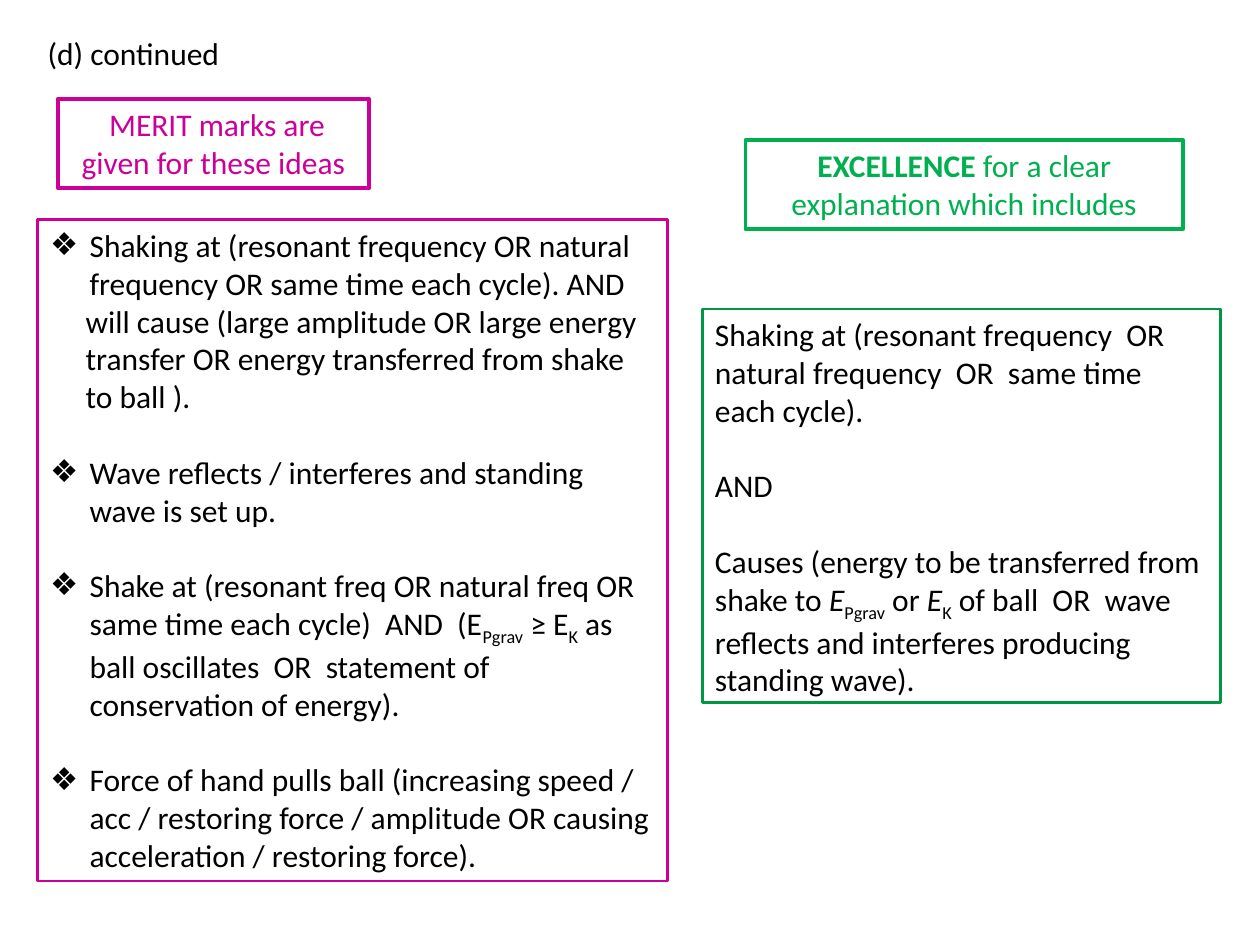
from lxml.etree import SubElement
from pptx import Presentation
from pptx.dml.color import RGBColor
from pptx.enum.text import MSO_ANCHOR, MSO_AUTO_SIZE, PP_ALIGN
from pptx.oxml.ns import qn
from pptx.util import Pt

TEXT_SIZE = 18
BLANK_LINE = 21.6
BLACK, MAGENTA, GREEN, DARK_GREEN = "000000", "CC0099", "00B050", "009644"
STYLES = {
    "plain": {"bold": False, "italic": False},
    "bold": {"bold": True},
    "italic": {"italic": True},
    "subscript": {"bold": False, "italic": False},
}
BULLET, CONTINUED = (22.5, -22.5, "❖"), (20.3, 0, None)

MERIT_IDEAS = [
    (BULLET, 0, ["Shaking at (resonant frequency OR natural frequency OR same time each cycle). AND"]),
    (CONTINUED, 0, ["will cause (large amplitude OR large energy"]),
    (CONTINUED, 0, ["transfer OR energy transferred from shake"]),
    (CONTINUED, BLANK_LINE, ["to ball )."]),
    (BULLET, BLANK_LINE, ["Wave reflects / interferes and standing wave is set up."]),
    (BULLET, BLANK_LINE, [
        "Shake at (resonant freq OR natural freq OR same time each cycle)  AND  (E",
        ("Pgrav", "subscript"), " ≥ E", ("K", "subscript"),
        " as ball oscillates  OR  statement of conservation of energy)."]),
    (BULLET, 0, ["Force of hand pulls ball (increasing speed / acc / restoring force / "
                 "amplitude OR causing acceleration / restoring force)."]),
]
EXCELLENCE_IDEAS = [
    (None, BLANK_LINE, ["Shaking at (resonant frequency  OR natural frequency  OR  same time each cycle)."]),
    (None, BLANK_LINE, ["AND"]),
    (None, 0, ["Causes (energy to be transferred from shake to ",
               ("E", "italic"), ("Pgrav", "subscript"), " or ",
               ("E", "italic"), ("K", "subscript"),
               " of ball  OR  wave reflects and interferes producing standing wave)."]),
]


def color(hex_string):
    """Turn a hex string into a colour."""
    return RGBColor.from_string(hex_string)


def set_attributes(target, values):
    """Set each named value on the target."""
    for name, value in values.items():
        setattr(target, name, value)


def place(shape, box):
    """Move a shape to the box, given as left, top, width and height in points."""
    set_attributes(shape, dict(zip(("left", "top", "width", "height"), map(Pt, box))))


def set_outline(shape, hex_string, width):
    """Give a shape a coloured outline."""
    shape.line.color.rgb = color(hex_string)
    shape.line.width = Pt(width)


def set_list_format(paragraph, list_format):
    """Set the indents and the bullet of a paragraph."""
    left, first_line, character = list_format
    properties = paragraph._p.get_or_add_pPr()
    properties.set("marL", str(Pt(left)))
    properties.set("indent", str(Pt(first_line)))
    if character:
        SubElement(properties, qn("a:buChar")).set("char", character)
    else:
        SubElement(properties, qn("a:buNone"))


def add_run(paragraph, piece, hex_string):
    """Add one piece of text, plain or paired with a style name."""
    text, style = (piece, "plain") if isinstance(piece, str) else piece
    run = paragraph.add_run()
    run.text = text
    set_attributes(run.font, {"name": "Calibri", "size": Pt(TEXT_SIZE), **STYLES[style]})
    run.font.color.rgb = color(hex_string)
    if style == "subscript":
        run._r.get_or_add_rPr().set("baseline", "-25000")


def write(shape, paragraphs, hex_string=BLACK, alignment=PP_ALIGN.LEFT, wrap=True):
    """Fill a shape with formatted paragraphs."""
    frame = shape.text_frame
    set_attributes(frame, {"word_wrap": wrap, "auto_size": MSO_AUTO_SIZE.NONE,
                           "vertical_anchor": MSO_ANCHOR.TOP})
    for index, (list_format, gap, pieces) in enumerate(paragraphs):
        paragraph = frame.add_paragraph() if index else frame.paragraphs[0]
        set_attributes(paragraph, {"alignment": alignment, "space_before": Pt(0),
                                   "space_after": Pt(gap)})
        if list_format:
            set_list_format(paragraph, list_format)
        for piece in pieces:
            add_run(paragraph, piece, hex_string)


def add_title(slide, box):
    """Place the slide title."""
    title = slide.shapes.title
    place(title, box)
    write(title, [(None, 0, ["(d) continued"])], wrap=False)


def add_heading(slide, box, pieces, hex_string):
    """Add a framed, centred heading."""
    heading = slide.shapes.add_textbox(*map(Pt, box))
    set_outline(heading, hex_string, 2.25)
    write(heading, [(None, 0, pieces)], hex_string, PP_ALIGN.CENTER)


def add_merit_list(slide, box):
    """Place the bulleted merit ideas in the body placeholder."""
    body = slide.placeholders[1]
    place(body, box)
    set_outline(body, MAGENTA, 1.5)
    write(body, MERIT_IDEAS)


def add_excellence_text(slide, box):
    """Add the framed excellence explanation."""
    explanation = slide.shapes.add_textbox(*map(Pt, box))
    set_outline(explanation, DARK_GREEN, 1.5)
    write(explanation, EXCELLENCE_IDEAS)


def main():
    """Build and save the presentation."""
    presentation = Presentation()
    presentation.slide_width, presentation.slide_height = Pt(720), Pt(540)
    slide = presentation.slides.add_slide(presentation.slide_layouts[1])
    add_title(slide, (20, 16, 114, 29))
    add_merit_list(slide, (21.5, 125.5, 360, 378))
    add_heading(slide, (33, 56.5, 178, 51), [" MERIT marks are given for these ideas"], MAGENTA)
    add_heading(slide, (426, 80, 250, 51),
                [("EXCELLENCE", "bold"), " for a clear explanation which includes"], GREEN)
    add_excellence_text(slide, (401.5, 176.5, 296, 225))
    presentation.save("out.pptx")


if __name__ == "__main__":
    main()
